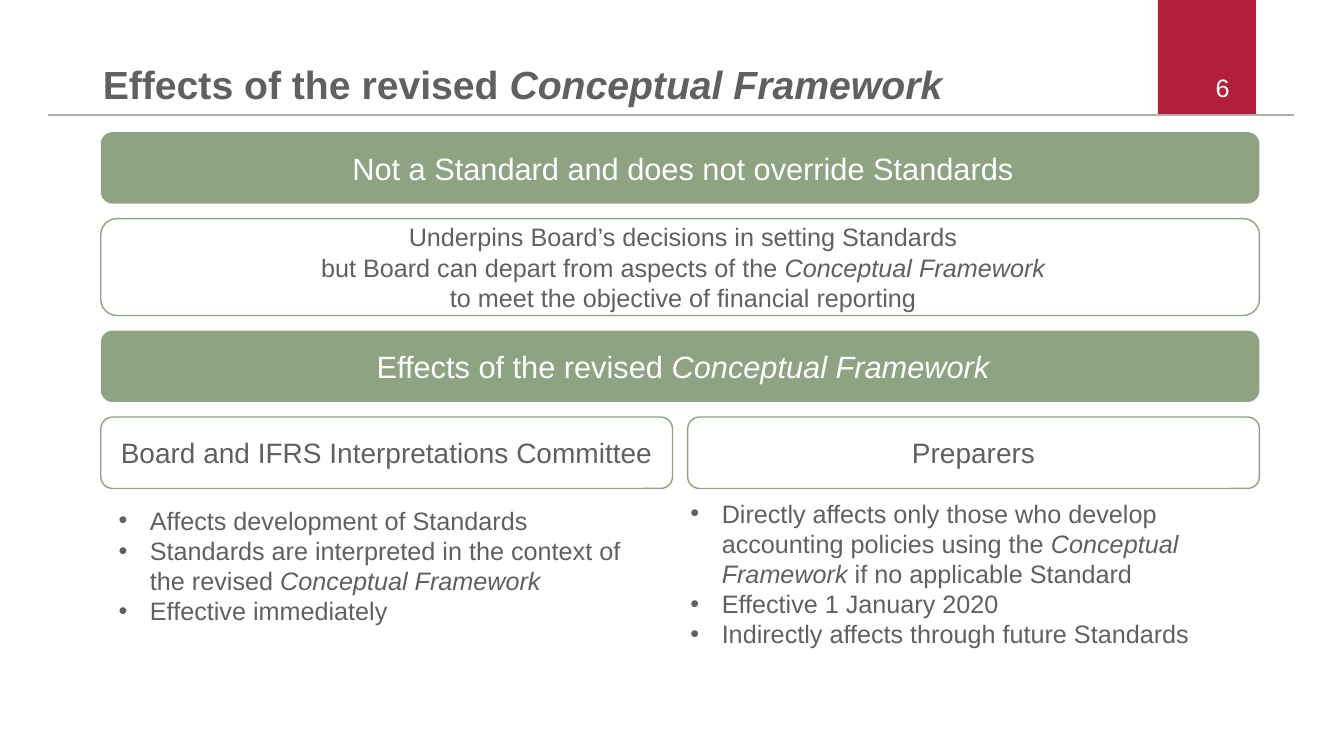
"""Builds the slide on the effects of the revised Conceptual Framework."""
from lxml import etree
from pptx import Presentation
from pptx.util import Cm, Pt
from pptx.dml.color import RGBColor
from pptx.enum import shapes as sh, text as tx
from pptx.oxml.ns import qn

TITLE = "Effects of the revised *Conceptual Framework*"
NUMBER = "6"
ROWS = [
    (1.8, 22, True, ["Not a Standard and does not override Standards"]),
    (2.44, 18, False, ["Underpins Board’s decisions in setting Standards\n"
                       "but Board can depart from aspects of the *Conceptual Framework*\n"
                       "to meet the objective of financial reporting"]),
    (1.8, 22, True, [TITLE]),
    (1.8, 20, False, ["Board and IFRS Interpretations Committee", "Preparers"]),
]
LISTS = [
    ((2.74, 12.6, 13.41, 3.33), [
        "Affects development of Standards",
        "Standards are interpreted in the context of the revised *Conceptual Framework*",
        "Effective immediately"]),
    ((17.15, 12.42, 14.6, 4.11), [
        "Directly affects only those who develop accounting policies using the "
        "*Conceptual Framework* if no applicable Standard",
        "Effective 1 January 2020",
        "Indirectly affects through future Standards"]),
]
COLORS = {"red": "B31E3B", "rule": "AFAFB0", "text": "5F6062",
          "green": "8DA381", "white": "FFFFFF"}
LEFT, TOP, WIDE, GAP = 2.54, 3.33, 29.2, 0.38
RULE = 2.9
INDENT = 0.79


def color(name):
    return RGBColor.from_string(COLORS[name])


def write(para, words, size, tint, align=None):
    """Write words into a paragraph, with *stars* around italics."""
    para.alignment = align
    para.font.name, para.font.size = "Arial", Pt(size)
    para.font.color.rgb = color(tint)
    for i, part in enumerate(words.split("*")):
        for j, line in enumerate(part.split("\n")):
            if j:
                para.add_line_break()
            if line:
                run = para.add_run()
                run.text = line
                if i % 2:
                    run.font.italic = True


def bullet(para):
    props = para._p.get_or_add_pPr()
    props.set("marL", str(Cm(INDENT)))
    props.set("indent", str(-Cm(INDENT)))
    etree.SubElement(props, qn("a:buFont")).set("typeface", "Arial")
    etree.SubElement(props, qn("a:buChar")).set("char", "•")


def shape(slide, kind, spot, fill=None, line=None):
    box = slide.shapes.add_shape(kind, *map(Cm, spot))
    box.shadow.inherit = False
    if fill:
        box.fill.solid()
        box.fill.fore_color.rgb = color(fill)
    else:
        box.fill.background()
    if line:
        box.line.color.rgb = color(line)
        box.line.width = Pt(1)
    else:
        box.line.fill.background()
    return box


def frame(slide, spot):
    area = slide.shapes.add_textbox(*map(Cm, spot)).text_frame
    area.word_wrap = True
    return area


def header(slide):
    shape(slide, sh.MSO_SHAPE.RECTANGLE, (29.18, 0, 2.47, RULE), "red")
    rule = slide.shapes.add_connector(
        sh.MSO_CONNECTOR.STRAIGHT, Cm(1.22), Cm(RULE), Cm(32.61), Cm(RULE))
    rule.line.color.rgb = color("rule")
    rule.line.width = Pt(1.2)
    etree.SubElement(rule._element.spPr, qn("a:effectLst"))
    area = frame(slide, (23.34, 1.7, 7.9, 1.02))
    area.vertical_anchor = tx.MSO_ANCHOR.MIDDLE
    write(area.paragraphs[0], NUMBER, 18, "white", tx.PP_ALIGN.RIGHT)
    title = slide.shapes.title
    title.left, title.top, title.width, title.height = map(Cm, (2.59, 0, 25.1, 2.72))
    area = title.text_frame
    area.margin_left = area.margin_right = area.margin_top = area.margin_bottom = 0
    area.vertical_anchor = tx.MSO_ANCHOR.BOTTOM
    para = area.paragraphs[0]
    write(para, TITLE, 28, "text", tx.PP_ALIGN.LEFT)
    para.font.bold = True
    para.line_spacing = 0.9


def grid(slide):
    top = TOP
    for high, size, solid, cells in ROWS:
        wide = (WIDE - GAP * (len(cells) - 1)) / len(cells)
        for i, words in enumerate(cells):
            spot = (LEFT + i * (wide + GAP), top, wide, high)
            fill, line, tint = ("green", None, "white") if solid else (None, "green", "text")
            area = shape(slide, sh.MSO_SHAPE.ROUNDED_RECTANGLE, spot, fill, line).text_frame
            area.word_wrap = True
            area.vertical_anchor = tx.MSO_ANCHOR.MIDDLE
            if len(cells) == 1:
                area.margin_right = Cm(0.1)
            write(area.paragraphs[0], words, size, tint, tx.PP_ALIGN.CENTER)
        top += high + GAP


def lists(slide):
    for spot, items in LISTS:
        area = frame(slide, spot)
        for i, words in enumerate(items):
            para = area.add_paragraph() if i else area.paragraphs[0]
            bullet(para)
            write(para, words, 18, "text")


def main():
    deck = Presentation()
    deck.slide_width, deck.slide_height = Cm(33.87), Cm(19.05)
    slide = deck.slides.add_slide(deck.slide_layouts[5])
    header(slide)
    grid(slide)
    lists(slide)
    deck.save("out.pptx")


if __name__ == "__main__":
    main()
